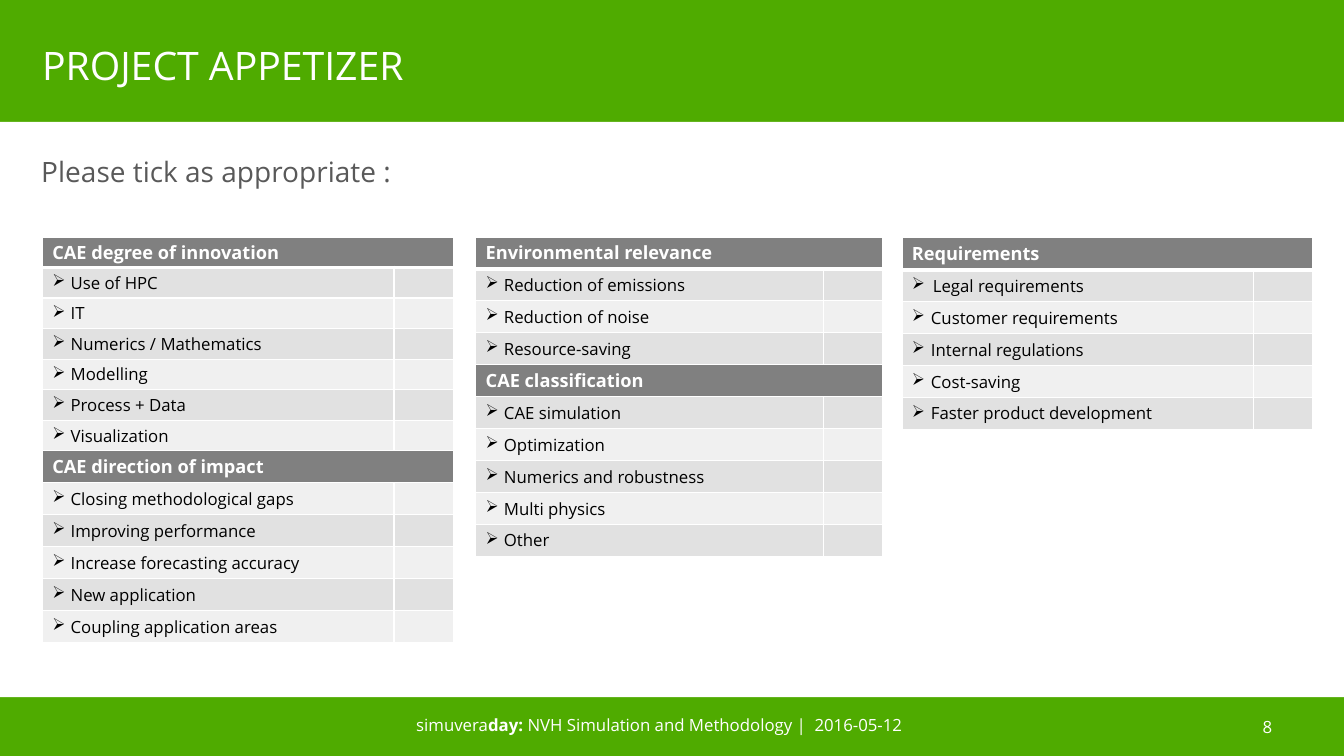
from lxml import etree
from pptx import Presentation
from pptx import util as u
from pptx.dml.color import RGBColor
from pptx.enum import shapes, text
from pptx.oxml import ns

GREEN = RGBColor(0x4F, 0xAB, 0x00)
WHITE = RGBColor(0xFF, 0xFF, 0xFF)
BLACK = RGBColor(0x00, 0x00, 0x00)
SLATE = RGBColor(0x59, 0x59, 0x59)
GREY = RGBColor(0x80, 0x80, 0x80)
BANDS = RGBColor(0xF0, 0xF0, 0xF0), RGBColor(0xE1, 0xE1, 0xE1)

WIDTH, HEIGHT = 33.87, 19.05
LOW, TALL = 0.77, 4.83 / 6  # row heights in cm
TICK = 1.5  # width of the tick column in cm

# Each table: left, top, label width, text indent, sections of (title, row height, items)
TABLES = [
    (1.07, 5.97, 8.86, 0.46, [
        ("CAE degree of innovation", LOW,
         ["Use of HPC", "IT", "Numerics / Mathematics", "Modelling",
          "Process + Data", "Visualization"]),
        ("CAE direction of impact", TALL,
         ["Closing methodological gaps", "Improving performance",
          "Increase forecasting accuracy", "New application",
          "Coupling application areas"]),
    ]),
    (11.99, 5.97, 8.76, 0.46, [
        ("Environmental relevance", TALL,
         ["Reduction of emissions", "Reduction of noise", "Resource-saving"]),
        ("CAE classification", TALL,
         ["CAE simulation", "Optimization", "Numerics and robustness",
          "Multi physics", "Other"]),
    ]),
    (22.73, 5.99, 8.86, 0.48, [
        ("Requirements", TALL,
         ["Legal requirements", "Customer requirements", "Internal regulations",
          "Cost-saving", "Faster product development"]),
    ]),
]
INDENTS = {"Legal requirements": 0.53}


def assign(target, **values):
    for name, value in values.items():
        setattr(target, name, value)


class Page:
    def __init__(self, slide, face):
        self.slide = slide
        self.face = face

    def style(self, font, size, color, bold=False):
        assign(font, name=self.face, size=u.Pt(size), bold=bold)
        font.color.rgb = color

    def bar(self, top, height, color):
        """Draw a plain band across the whole slide."""
        band = self.slide.shapes.add_shape(
            shapes.MSO_SHAPE.RECTANGLE, 0, u.Cm(top), u.Cm(WIDTH), u.Cm(height))
        band.shadow.inherit = False
        band.fill.solid()
        band.fill.fore_color.rgb = color
        band.line.fill.background()

    def label(self, left, top, width, height, size, color, *runs):
        """Write runs of text, each second one bold."""
        box = self.slide.shapes.add_textbox(*map(u.Cm, (left, top, width, height)))
        box.text_frame.word_wrap = False
        for index, words in enumerate(runs):
            run = box.text_frame.paragraphs[0].add_run()
            run.text = words
            self.style(run.font, size, color, index % 2 == 1)

    def edge(self, cell, bottom):
        """Give a cell white borders, 1 pt but for the bottom one."""
        props = cell._tc.get_or_add_tcPr()
        for index, side in enumerate("LRTB"):
            points = bottom if side == "B" else 1
            line = etree.Element(ns.qn(f"a:ln{side}"), w=str(u.Pt(points)))
            fill = etree.SubElement(line, ns.qn("a:solidFill"))
            etree.SubElement(fill, ns.qn("a:srgbClr"), val=str(WHITE))
            props.insert(index, line)

    def cell(self, cell, words, fill, size, color, bold=False, indent=0, bottom=1):
        assign(cell, margin_left=u.Cm(0.25), margin_right=u.Cm(0.25),
               margin_top=u.Cm(0.08), margin_bottom=u.Cm(0.08),
               vertical_anchor=text.MSO_ANCHOR.MIDDLE)
        cell.fill.solid()
        cell.fill.fore_color.rgb = fill
        self.edge(cell, bottom)
        para = cell.text_frame.paragraphs[0]
        if not words:
            etree.SubElement(para._p, ns.qn("a:endParaRPr"), sz=str(size * 100))
            return
        if indent:
            props = para._p.get_or_add_pPr()
            props.set("marL", str(u.Cm(indent)))
            props.set("indent", str(-u.Cm(indent)))
            etree.SubElement(props, ns.qn("a:buChar"), char="➢")
        run = para.add_run()
        run.text = words
        self.style(run.font, size, color, bold)

    def table(self, left, top, width, indent, parts):
        rows = [(words, height, index == 0) for title, height, items in parts
                for index, words in enumerate([title, *items])]
        total = sum(height for _, height, _ in rows)
        grid = self.slide.shapes.add_table(
            len(rows), 2, *map(u.Cm, (left, top, width + TICK, total))).table
        assign(grid, first_row=False, horz_banding=False)
        assign(grid.columns[0], width=u.Cm(width))
        assign(grid.columns[1], width=u.Cm(TICK))
        for index, (words, height, head) in enumerate(rows):
            grid.rows[index].height = u.Cm(height)
            first, tick = grid.cell(index, 0), grid.cell(index, 1)
            if head:
                form = dict(fill=GREY, size=13, color=WHITE, bold=True,
                            bottom=1 if index else 3)
                first.merge(tick)
            else:
                form = dict(fill=BANDS[index % 2], size=12, color=BLACK,
                            indent=INDENTS.get(words, indent))
            self.cell(first, words, **form)
            self.cell(tick, "", **form)


def main():
    deck = Presentation()
    assign(deck, slide_width=u.Cm(WIDTH), slide_height=u.Cm(HEIGHT))
    page = Page(deck.slides.add_slide(deck.slide_layouts[6]), "Open Sans")
    page.bar(0, HEIGHT, GREEN)
    page.bar(3.07, 14.5, WHITE)
    page.label(31.57, 17.93, 2.06, 0.76, 12, WHITE, "8")
    page.label(10.24, 17.88, 13.2, 0.76, 12, WHITE, "simuvera", "day: ",
               "NVH Simulation and Methodology |  2016-05-12")
    page.label(0.81, 0.91, 9.73, 1.45, 28, WHITE, "PROJECT APPETIZER")
    page.label(0.79, 3.78, 9.4, 1.12, 20, SLATE, "Please tick as appropriate :")
    for table in TABLES:
        page.table(*table)
    deck.save("out.pptx")


if __name__ == "__main__":
    main()
